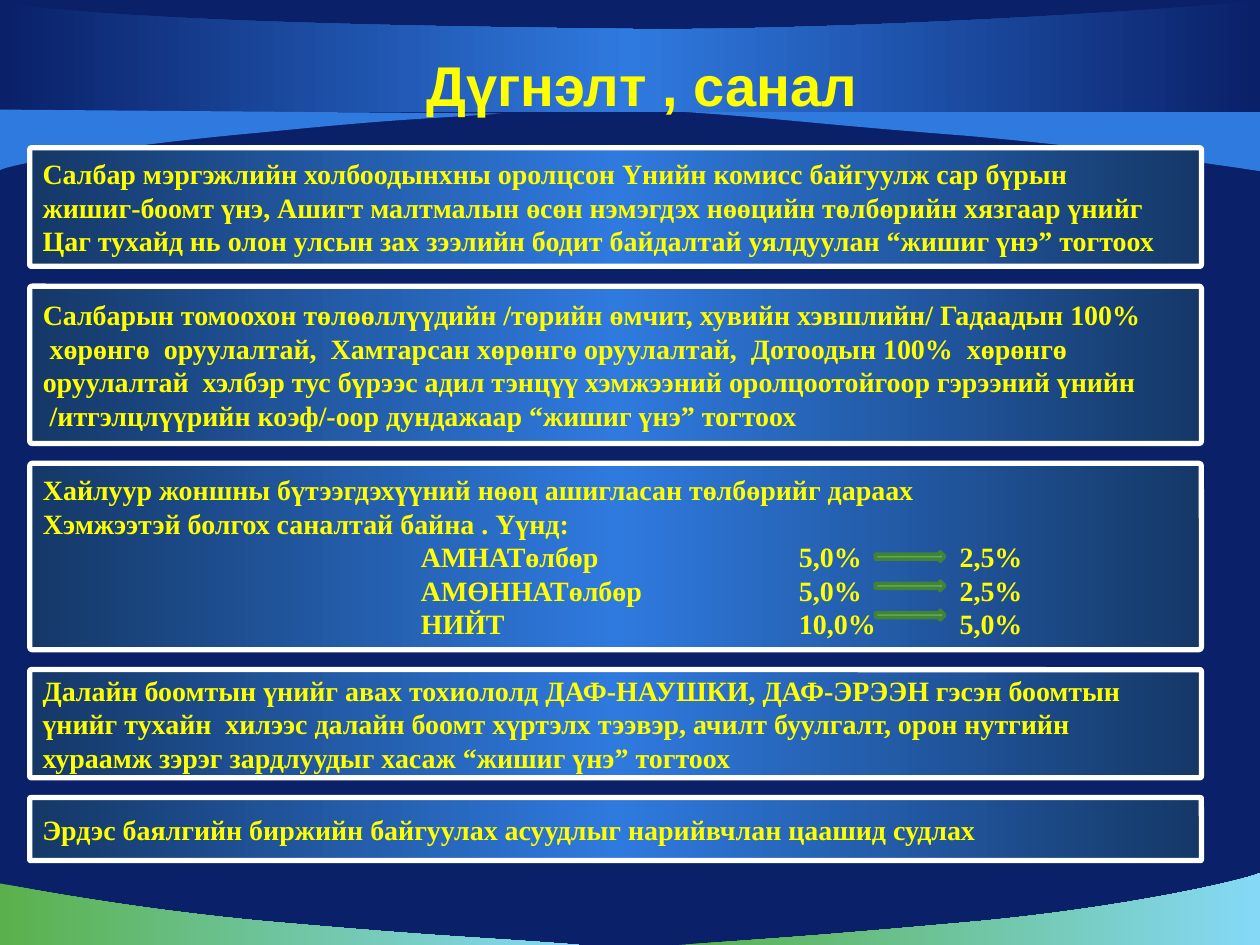
from lxml.etree import SubElement
from pptx import Presentation
from pptx.dml.color import RGBColor
from pptx.enum.shapes import MSO_SHAPE as Preset
from pptx.enum.text import MSO_ANCHOR as Anchor, PP_ALIGN as Align
from pptx.oxml.ns import qn
from pptx.util import Cm, Pt

NAVY, BLUE = "0A2068", "2F7ADF"
GREEN, DARK_GREEN, SKY = "5AB14B", "438337", "85D9F7"
YELLOW, WHITE = "FFFF00", "FFFFFF"
EDGE_SHADE = "46275"  # darkens the blue at the sides of the panels

TITLE = "Дүгнэлт , санал"

# Height in cm, then the lines of each panel, from top to bottom
PANELS = [
    (2.39, [
        "Салбар мэргэжлийн холбоодынхны оролцсон Үнийн комисс байгуулж сар бүрын",
        "жишиг-боомт үнэ, Ашигт малтмалын өсөн нэмэгдэх нөөцийн төлбөрийн хязгаар үнийг",
        "Цаг тухайд нь олон улсын зах зээлийн бодит байдалтай уялдуулан “жишиг үнэ” тогтоох",
    ]),
    (3.17, [
        "Салбарын томоохон төлөөллүүдийн /төрийн өмчит, хувийн хэвшлийн/ Гадаадын 100%",
        " хөрөнгө  оруулалтай,  Хамтарсан хөрөнгө оруулалтай,  Дотоодын 100%  хөрөнгө",
        "оруулалтай  хэлбэр тус бүрээс адил тэнцүү хэмжээний оролцоотойгоор гэрээний үнийн",
        " /итгэлцлүүрийн коэф/-оор дундажаар “жишиг үнэ” тогтоох",
    ]),
    (3.76, [
        "Хайлуур жоншны бүтээгдэхүүний нөөц ашигласан төлбөрийг дараах",
        "Хэмжээтэй болгох саналтай байна . Үүнд:",
        "\tАМНАТөлбөр\t5,0%\t2,5%",
        "\tАМӨННАТөлбөр\t5,0%\t2,5%",
        "\tНИЙТ\t10,0%\t5,0%",
    ]),
    (2.18, [
        "Далайн боомтын үнийг авах тохиололд ДАФ-НАУШКИ, ДАФ-ЭРЭЭН гэсэн боомтын",
        "үнийг тухайн  хилээс далайн боомт хүртэлх тээвэр, ачилт буулгалт, орон нутгийн",
        "хураамж зэрэг зардлуудыг хасаж “жишиг үнэ” тогтоох",
    ]),
    (1.27, ["Эрдэс баялгийн биржийн байгуулах асуудлыг нарийвчлан цаашид судлах"]),
]
PANEL_LEFT, PANEL_TOP, PANEL_WIDTH, PANEL_GAP = 0.6, 2.98, 23.62, 0.4
TAB_STOPS = [7.62, 15.24, 18.48]
ARROW_LEFT, ARROW_TOP, ARROW_STEP, ARROW_COUNT = 17.65, 11.12, 0.59, 3

# Colours, then outline in cm: a pair is a corner, a triple of pairs a Bézier curve
WAVES = [
    ([GREEN, SKY], [
        (11.68, 19.05), ((9.75, 18.9), (9.09, 18.9), (5.89, 18.62)),
        ((2.69, 18.36), (0.03, 17.81), (0, 17.81)), (0, 19.05)]),
    ([GREEN, SKY], [
        (13.69, 19.05), ((15.6, 18.92), (16.41, 18.87), (19.53, 18.59)),
        ((22.66, 18.31), (25.15, 17.73), (25.4, 17.6)), (25.4, 19.05)]),
    ([BLUE], [
        (13.82, 2.26), ((15.75, 2.39), (16.31, 2.49), (19.51, 2.74)),
        ((22.71, 3.02), (25.37, 3.45), (25.4, 3.45)), (25.4, 2.24)]),
    ([NAVY, BLUE, NAVY], [
        (0, 2.26), (25.4, 2.26), (25.4, 0),
        ((24.49, 0.15), (16.59, 0.66), (12.37, 0.58)),
        ((8.15, 0.53), (2.57, 0.43), (0, 0.05))]),
    ([BLUE], [
        (10.11, 2.29), ((8.41, 2.41), (8.08, 2.39), (5.28, 2.67)),
        ((2.46, 2.92), (0.23, 3.3), (0, 3.43)), (0, 2.21)]),
]


def rgb(value):
    return RGBColor.from_string(value)


def paint(shape, colours):
    """Fill with one colour, or with evenly spaced colours from left to right."""
    shape.shadow.inherit = False
    if len(colours) == 1:
        shape.fill.solid()
        shape.fill.fore_color.rgb = rgb(colours[0])
        return
    shape.fill.gradient()
    shape.fill.gradient_angle = 0
    stops = next(shape._element.iter(qn("a:gsLst")))
    for stop in list(stops):
        stops.remove(stop)
    for i, colour in enumerate(colours):
        position = 100000 * i // (len(colours) - 1)
        stop = SubElement(stops, qn("a:gs"), pos=str(position))
        SubElement(stop, qn("a:srgbClr"), val=colour)


def darken_sides(shape):
    """Shade the first and last colour of a gradient."""
    colours = list(next(shape._element.iter(qn("a:gsLst"))).iter(qn("a:srgbClr")))
    for colour in (colours[0], colours[-1]):
        SubElement(colour, qn("a:gamma"))
        SubElement(colour, qn("a:shade"), val=EDGE_SHADE)
        SubElement(colour, qn("a:invGamma"))


def outline(shape, colour, width):
    shape.line.color.rgb = rgb(colour)
    shape.line.width = Pt(width)


def set_font(paragraph, name, size):
    font = paragraph.font
    font.name, font.size, font.bold = name, Pt(size), True
    font.color.rgb = rgb(YELLOW)


def add_wave(slide, colours, segments):
    start, *rest = segments
    curves = [segment if len(segment) == 3 else None for segment in rest]
    corners = [segment[-1] if len(segment) == 3 else segment for segment in rest]
    builder = slide.shapes.build_freeform(Cm(start[0]), Cm(start[1]))
    builder.add_line_segments([(Cm(x), Cm(y)) for x, y in corners], close=True)
    wave = builder.convert_to_shape()
    for line, curve in zip(list(wave._element.iter(qn("a:lnTo"))), curves):
        if curve:
            bend(line, curve, wave.left, wave.top)
    paint(wave, colours)
    wave.line.fill.background()


def bend(line, curve, left, top):
    """Turn a straight segment into a cubic Bézier curve."""
    bezier = SubElement(line.getparent(), qn("a:cubicBezTo"))
    line.getparent().replace(line, bezier)
    for x, y in curve:
        SubElement(bezier, qn("a:pt"), x=str(Cm(x) - left), y=str(Cm(y) - top))


def add_tab_stops(paragraph):
    tabs = SubElement(paragraph._p.get_or_add_pPr(), qn("a:tabLst"))
    for position in TAB_STOPS:
        SubElement(tabs, qn("a:tab"), pos=str(Cm(position)), algn="l")


def add_panel(slide, top, height, lines):
    panel = slide.shapes.add_shape(Preset.ROUNDED_RECTANGLE, Cm(PANEL_LEFT), Cm(top),
                                   Cm(PANEL_WIDTH), Cm(height))
    panel.adjustments[0] = 0.015
    paint(panel, [BLUE, BLUE, BLUE])
    darken_sides(panel)
    outline(panel, WHITE, 3)
    frame = panel.text_frame
    frame.word_wrap = True
    frame.vertical_anchor = Anchor.MIDDLE
    for i, line in enumerate(lines):
        para = frame.add_paragraph() if i else frame.paragraphs[0]
        para.text = line
        para.alignment = Align.LEFT
        if "\t" in line:
            add_tab_stops(para)
        set_font(para, "Times New Roman", 16)


def add_title(slide):
    title = slide.shapes.title
    title.left, title.top, title.width, title.height = Cm(1.41), Cm(0.99), Cm(23.06), Cm(1.4)
    frame = title.text_frame
    frame.text = TITLE
    frame.vertical_anchor = Anchor.MIDDLE
    frame.paragraphs[0].alignment = Align.CENTER
    set_font(frame.paragraphs[0], "Arial", 32)
    slide.shapes._spTree.append(title._element)  # in front of the waves


def main():
    deck = Presentation()
    deck.slide_width, deck.slide_height = Cm(25.4), Cm(19.05)
    slide = deck.slides.add_slide(deck.slide_layouts[5])
    slide.background.fill.solid()
    slide.background.fill.fore_color.rgb = rgb(NAVY)

    for colours, segments in WAVES:
        add_wave(slide, colours, segments)
    add_title(slide)

    top = PANEL_TOP
    for height, lines in PANELS:
        add_panel(slide, top, height, lines)
        top += height + PANEL_GAP

    for i in range(ARROW_COUNT):
        arrow = slide.shapes.add_shape(Preset.RIGHT_ARROW, Cm(ARROW_LEFT),
                                       Cm(ARROW_TOP + i * ARROW_STEP), Cm(1.4), Cm(0.2))
        paint(arrow, [GREEN])
        outline(arrow, DARK_GREEN, 2)

    deck.save("out.pptx")


if __name__ == "__main__":
    main()
